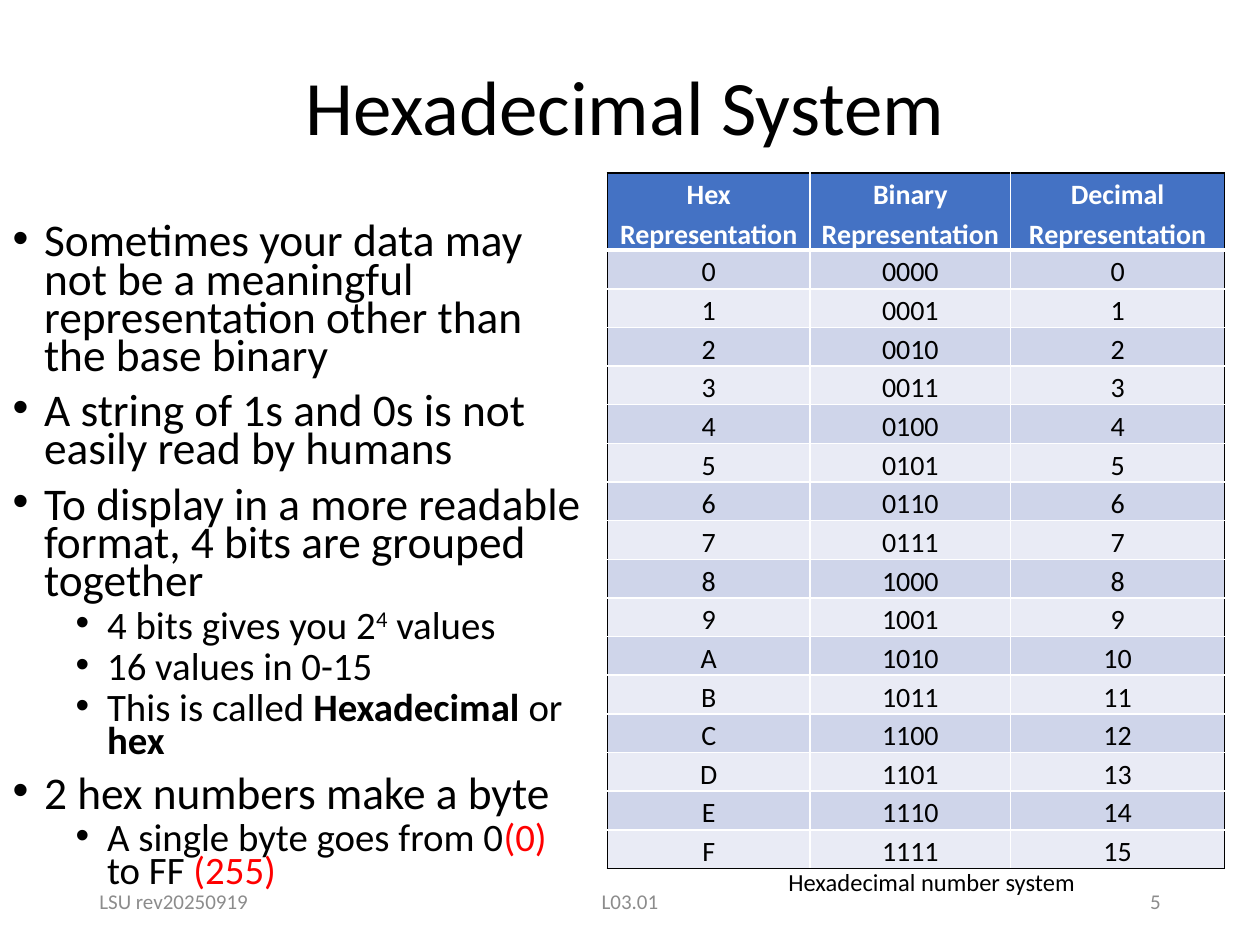
from lxml.etree import SubElement
from pptx import Presentation
from pptx.dml.color import RGBColor
from pptx.enum.text import MSO_ANCHOR as Anchor, MSO_AUTO_SIZE as AutoSize, PP_ALIGN as Align
from pptx.oxml.ns import qn
from pptx.util import Inches, Pt

BLACK = RGBColor(0x00, 0x00, 0x00)
WHITE = RGBColor(0xFF, 0xFF, 0xFF)
GREY = RGBColor(0x8C, 0x8C, 0x8C)
RED = RGBColor(0xFF, 0x00, 0x00)
BLUE = RGBColor(0x44, 0x72, 0xC4)
BANDS = RGBColor(0xCF, 0xD5, 0xEA), RGBColor(0xE9, 0xEB, 0xF5)
FONT = "Calibri"
WIDTH, HEIGHT = Inches(10), Inches(7.5)

BULLETS = [
    (0, ["Sometimes your data may not be a meaningful representation other than the base binary"]),
    (0, ["A string of 1s and 0s is not easily read by humans"]),
    (0, ["To display in a more readable format, 4 bits are grouped together"]),
    (1, ["4 bits gives you 2", ("4", {"raised": True}), " values"]),
    (1, ["16 values in 0-15"]),
    (1, ["This is called ", ("Hexadecimal", {"bold": True}), " or ", ("hex", {"bold": True})]),
    (0, ["2 hex numbers make a byte"]),
    (1, ["A single byte goes from 0", ("(0)", {"color": RED}), " to FF ", ("(255)", {"color": RED})]),
]
HEADERS = ["Hex\nRepresentation", "Binary Representation", "Decimal Representation"]
FOOTERS = [
    ("LSU rev20250919", 0.069, 0.225, Align.LEFT),
    ("L03.01", 0.331, 0.338, Align.CENTER),
    ("5", 0.706, 0.225, Align.RIGHT),
]


def share(x, y, w, h):
    """Turn shares of the slide into left, top, width and height."""
    return int(WIDTH * x), int(HEIGHT * y), int(WIDTH * w), int(HEIGHT * h)


def place(sp, *box):
    """Move a placeholder to a box given in shares of the slide."""
    sp.left, sp.top, sp.width, sp.height = share(*box)


def write(p, text, size=16, color=BLACK, bold=False, raised=False):
    """Add one formatted run to a paragraph."""
    r = p.add_run()
    r.text = text
    r.font.name, r.font.size, r.font.bold = FONT, Pt(size), bold
    r.font.color.rgb = color
    if raised:
        r.font._element.set("baseline", "30000")


def add_title(s, text):
    """Fill the title placeholder."""
    sp = s.shapes.title
    place(sp, 0.173, 0.02, 0.646, 0.193)
    tf = sp.text_frame
    tf.auto_size, tf.vertical_anchor = AutoSize.NONE, Anchor.MIDDLE
    p = tf.paragraphs[0]
    p.alignment, p.line_spacing = Align.CENTER, 0.9
    write(p, text, size=44)


def add_bullets(s, items):
    """Fill the body placeholder with a two-level list."""
    sp = s.placeholders[1]
    place(sp, 0, 0.233, 0.471, 0.724)
    tf = sp.text_frame
    tf.auto_size = AutoSize.NONE
    for i, (level, runs) in enumerate(items):
        p = tf.add_paragraph() if i else tf.paragraphs[0]
        p.level, p.line_spacing = level, 0.7
        p.space_before = Pt((10, 5)[level] if i else 0)
        pPr = p._p.get_or_add_pPr()
        pPr.set("marL", str(Inches(0.25 + 0.5 * level)))
        pPr.set("indent", str(Inches(-0.25)))
        SubElement(pPr, qn("a:buFont"), typeface="Arial")
        SubElement(pPr, qn("a:buChar"), char="•")
        for run in runs:
            text, fmt = (run, {}) if isinstance(run, str) else run
            write(p, text, size=(25.9, 22.2)[level], **fmt)


def add_label(s, text, box, align=Align.CENTER, anchor=Anchor.TOP, **fmt):
    """Add a one-line text box."""
    tf = s.shapes.add_textbox(*share(*box)).text_frame
    tf.word_wrap, tf.vertical_anchor = True, anchor
    p = tf.paragraphs[0]
    p.alignment = align
    write(p, text, **fmt)


def add_border(cell, side, color, width=1):
    """Draw one side of a table cell."""
    ln = SubElement(cell._tc.get_or_add_tcPr(), qn(f"a:ln{side}"), w=str(Pt(width)))
    SubElement(SubElement(ln, qn("a:solidFill")), qn("a:srgbClr"), val=str(color))


def fill_cell(cell, text, fill, **fmt):
    """Colour a cell and write its centred lines."""
    cell.fill.solid()
    cell.fill.fore_color.rgb = fill
    cell.margin_left = cell.margin_right = Inches(0.07)
    cell.margin_top = cell.margin_bottom = 0
    for i, line in enumerate(text.split("\n")):
        tf = cell.text_frame
        p = tf.add_paragraph() if i else tf.paragraphs[0]
        p.alignment, p.line_spacing = Align.CENTER, 1.15
        write(p, line, **fmt)


def add_number_table(s):
    """Add the table of the sixteen hexadecimal digits."""
    rows = [HEADERS] + [[f"{n:X}", f"{n:04b}", str(n)] for n in range(16)]
    last_row, last_col = len(rows) - 1, len(HEADERS) - 1
    box = share(0.482, 0.183, 0.49, 0.68)
    table = s.shapes.add_table(len(rows), len(HEADERS), *box).table
    for col, width in zip(table.columns, (0.161, 0.159, 0.17)):
        col.width = int(WIDTH * width)
    for i, row in enumerate(rows):
        table.rows[i].height = int(HEIGHT * 0.04)
        for j, text in enumerate(row):
            cell = table.cell(i, j)
            outer = {"L": j == 0, "R": j == last_col, "T": i == 0, "B": i == last_row}
            for side, is_outer in outer.items():
                heavy = (side, i) in (("B", 0), ("T", 1))
                add_border(cell, side, BLACK if is_outer else WHITE, 3 if heavy else 1)
            if i == 0:
                fill_cell(cell, text, BLUE, color=WHITE, bold=True)
            else:
                fill_cell(cell, text, BANDS[(i - 1) % 2])


def main():
    """Build the slide and save it."""
    prs = Presentation()
    prs.slide_width, prs.slide_height = WIDTH, HEIGHT
    s = prs.slides.add_slide(prs.slide_layouts[1])
    add_title(s, "Hexadecimal System")
    add_bullets(s, BULLETS)
    for text, x, w, align in FOOTERS:
        add_label(s, text, (x, 0.927, w, 0.053), align, Anchor.MIDDLE, size=12, color=GREY)
    add_label(s, "Hexadecimal number system", (0.548, 0.911, 0.383, 0.045), size=14)
    add_number_table(s)
    prs.save("out.pptx")


if __name__ == "__main__":
    main()
